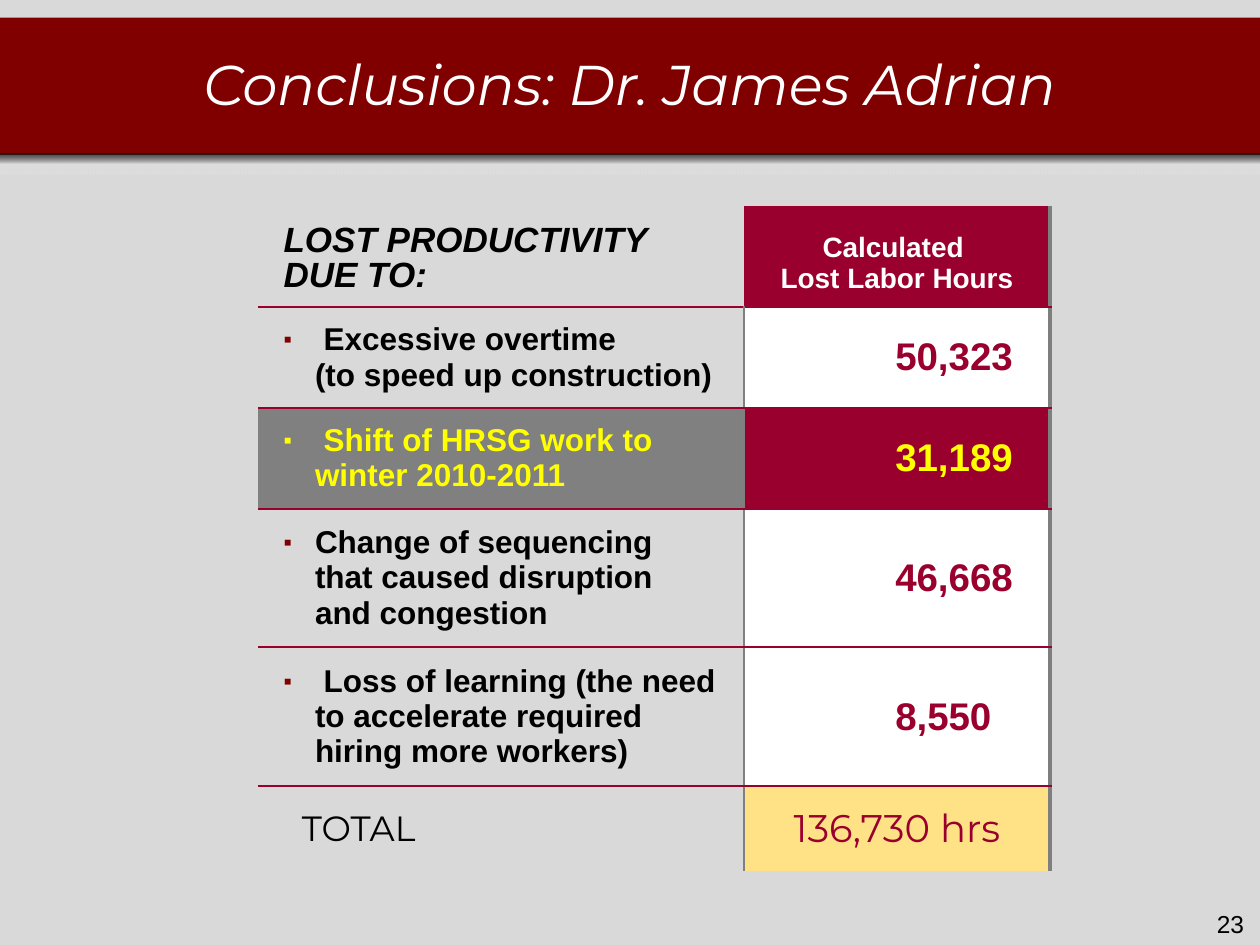
from copy import deepcopy
from dataclasses import dataclass

from pptx import Presentation
from pptx import util as u
from pptx.dml.color import RGBColor
from pptx.enum import shapes, text
from pptx.oxml import parse_xml
from pptx.oxml.ns import nsdecls, qn

Pt = u.Pt
LEFT, MID, RIGHT = text.PP_ALIGN.LEFT, text.PP_ALIGN.CENTER, text.PP_ALIGN.RIGHT
TOP, CORE, BASE = text.MSO_ANCHOR.TOP, text.MSO_ANCHOR.MIDDLE, text.MSO_ANCHOR.BOTTOM


@dataclass
class Theme:
    back: str = "D9D9D9"
    band: str = "800000"
    wine: str = "9A002E"
    edge: str = "7F7F7F"
    mark: str = "808080"
    gold: str = "FFE285"
    sun: str = "FFFF00"
    white: str = "FFFFFF"
    black: str = "000000"
    haze: str = "DDDDDD"
    sans: str = "Arial"
    head: str = "Montserrat"
    title: int = 32
    value: int = 22
    lead: int = 20
    body: int = 18
    label: int = 16
    page: int = 14


def rgb(code):
    return RGBColor.from_string(code)


def node(xml):
    return parse_xml(xml.replace(" ", f" {nsdecls('a')} ", 1))


def write(frame, words, size, color, font, bold=False, italic=False,
          align=LEFT, space=None, bullet=None, tab=None, indent=0):
    para = frame.paragraphs[0]
    para.alignment = align
    para.line_spacing = space
    props = para._p.get_or_add_pPr()
    if bullet:
        props.set("marL", str(Pt(18)))
        props.set("indent", str(Pt(-18)))
        props.append(node(f'<a:buClr ><a:srgbClr val="{bullet}"/></a:buClr>'))
        props.append(node('<a:buSzPct val="75000"/>'))
        props.append(node(f'<a:buFont typeface="{font}"/>'))
        props.append(node('<a:buChar char="▪"/>'))
    elif indent:
        props.set("marL", str(Pt(indent)))
    if tab:
        props.append(node(
            f'<a:tabLst ><a:tab pos="{Pt(tab)}" algn="l"/></a:tabLst>'))
    for num, line in enumerate(words.split("\n")):
        if num:
            para.add_line_break()
        run = para.add_run()
        run.text = line
        run.font.size = Pt(size)
        run.font.name = font
        run.font.bold = bold
        run.font.italic = italic
        run.font.color.rgb = rgb(color)
    for gap in para._p.findall(qn("a:br")):
        gap.append(deepcopy(run._r.rPr))


class Deck:
    def __init__(self, theme):
        self.theme = theme
        self.show = Presentation()
        self.show.slide_width, self.show.slide_height = Pt(720), Pt(540)
        self.slide = self.show.slides.add_slide(self.show.slide_layouts[6])

    def rect(self, x, y, w, h, fill=None):
        box = self.slide.shapes.add_shape(
            shapes.MSO_SHAPE.RECTANGLE, Pt(x), Pt(y), Pt(w), Pt(h))
        box.shadow.inherit = False
        box.line.fill.background()
        if fill:
            box.fill.solid()
            box.fill.fore_color.rgb = rgb(fill)
        return box

    def shade(self, x, y, w, h):
        fill = self.rect(x, y, w, h).fill
        fill.gradient()
        fill.gradient_angle = 270
        dark, pale = fill.gradient_stops
        dark.position, pale.position = 0, 0.5
        dark.color.rgb, pale.color.rgb = rgb(self.theme.black), rgb(self.theme.haze)
        tone = fill._xPr.find(".//" + qn("a:srgbClr"))
        tone.append(node('<a:alpha val="68000"/>'))

    def label(self, x, y, w, h, words, anchor=TOP, **form):
        frame = self.slide.shapes.add_textbox(Pt(x), Pt(y), Pt(w), Pt(h)).text_frame
        frame.word_wrap = True
        frame.vertical_anchor = anchor
        write(frame, words, **form)

    def grid(self, x, y, cols, rows):
        table = self.slide.shapes.add_table(
            len(rows), len(cols), Pt(x), Pt(y), Pt(sum(cols)), Pt(sum(rows))).table
        table.first_row = table.horz_banding = False
        table._tbl.tblPr[0].text = "{2D5ABB26-0587-4C30-8999-92F81FD0307C}"
        for col, wide in zip(table.columns, cols):
            col.width = Pt(wide)
        for row, high in zip(table.rows, rows):
            row.height = Pt(high)
        return table

    def cell(self, cell, words, fill=None, anchor=CORE, sides=None, **form):
        cell.margin_left = cell.margin_right = Pt(14.4)
        cell.margin_top = cell.margin_bottom = Pt(7.2)
        cell.vertical_anchor = anchor
        props = cell._tc.get_or_add_tcPr()
        for side in "LRTB":
            if side in sides:
                color, wide = sides[side]
                props.append(node(
                    f'<a:ln{side} w="{Pt(wide)}"><a:solidFill>'
                    f'<a:srgbClr val="{color}"/></a:solidFill></a:ln{side}>'))
        if fill:
            cell.fill.solid()
            cell.fill.fore_color.rgb = rgb(fill)
        else:
            cell.fill.background()
        write(cell.text_frame, words, **form)


def main():
    t = Theme()
    deck = Deck(t)
    deck.rect(0, 0, 720, 540, t.back)
    deck.rect(0, 10, 720, 78.5, t.band)
    deck.shade(0, 88, 720, 12)
    deck.label(0, 14.4, 720, 66, "Conclusions: Dr. James Adrian", anchor=CORE,
               size=t.title, color=t.white, font=t.head, italic=True, align=MID)

    causes = [
        (" Excessive overtime \n(to speed up construction)", "50,323"),
        (" Shift of HRSG work to \nwinter 2010-2011", "31,189"),
        ("Change of sequencing \nthat caused disruption \nand congestion", "46,668"),
        (" Loss of learning (the need to accelerate required hiring more workers)",
         "8,550"),
    ]
    heights = [49, 39, 18, 32, 34, 48.5]
    table = deck.grid(147.6, 117.8, [277.6, 174.8], heights)
    last = len(heights) - 1

    def sides(row, col):
        found = {}
        if row:
            found["T"] = (t.wine, 1.5)
            found["R" if col == 0 else "L"] = (t.edge, 1)
        if row < last:
            found["B"] = (t.wine, 1.5)
        if col:
            found["R"] = (t.edge, 2.25)
        return found

    def put(row, col, words, **form):
        deck.cell(table.cell(row, col), words, sides=sides(row, col), **form)

    put(0, 0, "LOST PRODUCTIVITY \nDUE TO:", anchor=BASE, size=t.lead,
        color=t.black, font=t.sans, bold=True, italic=True, space=0.9)
    put(0, 1, "Calculated \nLost Labor Hours", fill=t.wine, anchor=BASE,
        size=t.label, color=t.white, font=t.sans, bold=True, align=MID)
    for row, (cause, hours) in enumerate(causes, 1):
        hot = row == 2
        put(row, 0, cause, fill=t.mark if hot else None, size=t.body,
            color=t.sun if hot else t.black, font=t.sans, bold=True,
            bullet=t.sun if hot else t.band, tab=18)
        put(row, 1, "\t" + hours, fill=t.wine if hot else t.white, size=t.value,
            color=t.sun if hot else t.wine, font=t.sans, bold=True, tab=72)
    put(last, 0, "TOTAL", size=t.lead, color=t.black, font=t.head, indent=10.5)
    put(last, 1, "136,730 hrs", fill=t.gold, size=t.value, color=t.wine,
        font=t.head, align=MID)

    deck.label(550, 516, 168, 24, "23", size=t.page, color=t.black,
               font=t.sans, align=RIGHT)
    deck.show.save("out.pptx")


if __name__ == "__main__":
    main()
